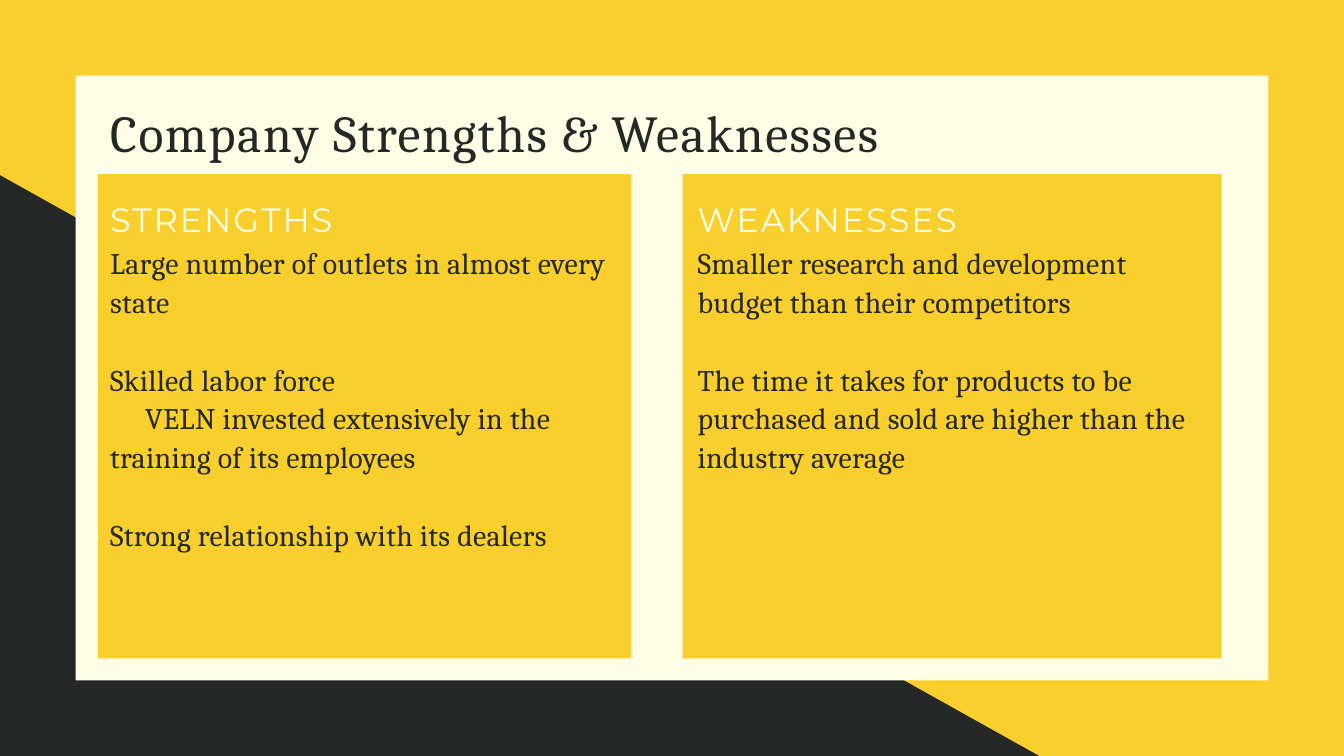
import pptx
import pptx.dml.color
import pptx.enum.shapes
import pptx.enum.text
import pptx.util
from dataclasses import dataclass

Pt = pptx.util.Pt


@dataclass(frozen=True)
class TextStyle:
    font: str
    size: float
    color: str
    spacing: float
    leading: float


class Theme:
    YELLOW = "F8CF2C"
    CREAM = "FFFEE6"
    DARK = "252827"
    TITLE = TextStyle("Cambria", 55.5, DARK, 1.7, 61)
    HEADING = TextStyle("Montserrat", 36, CREAM, 2.1, 46.8)
    BODY = TextStyle("Cambria", 32, DARK, 0.3, 41.6)


def rgb(color):
    return pptx.dml.color.RGBColor.from_string(color)


@dataclass
class Para:
    text: str
    gap: bool = False
    indent: float = 0


class Builder:
    def __init__(self, slide, theme):
        self.s = slide
        self.theme = theme

    def background(self, color):
        fill = self.s.background.fill
        fill.solid()
        fill.fore_color.rgb = rgb(color)

    def rect(self, x, y, w, h, color, rotation=0):
        sp = self.s.shapes.add_shape(
            pptx.enum.shapes.MSO_SHAPE.RECTANGLE, Pt(x), Pt(y), Pt(w), Pt(h))
        sp.shadow.inherit = False
        sp.fill.solid()
        sp.fill.fore_color.rgb = rgb(color)
        sp.line.fill.background()
        sp.rotation = rotation

    def text(self, x, y, w, h, paras, style):
        sp = self.s.shapes.add_textbox(Pt(x), Pt(y), Pt(w), Pt(h))
        tf = sp.text_frame
        tf.word_wrap = True
        tf.vertical_anchor = pptx.enum.text.MSO_ANCHOR.TOP
        tf.margin_left = tf.margin_top = tf.margin_right = tf.margin_bottom = 0
        for i, para in enumerate(paras):
            p = tf.add_paragraph() if i else tf.paragraphs[0]
            p.line_spacing = Pt(style.leading)
            if para.gap:
                p.space_before = Pt(style.leading)
            if para.indent:
                pPr = p._p.get_or_add_pPr()
                pPr.set("marL", "0")
                pPr.set("indent", str(Pt(para.indent)))
            r = p.add_run()
            r.text = para.text
            r.font.name = style.font
            r.font.size = Pt(style.size)
            r.font.color.rgb = rgb(style.color)
            r._r.get_or_add_rPr().set("spc", str(round(style.spacing * 100)))

    def panel(self, x, w, text_x, text_w, heading, paras):
        self.rect(x, 186.5, w, 519, self.theme.YELLOW)
        self.text(text_x, 209.5, text_w, 45.5, [Para(heading)], self.theme.HEADING)
        self.text(text_x, 259, text_w, 328, paras, self.theme.BODY)


def main():
    prs = pptx.Presentation()
    prs.slide_width, prs.slide_height = Pt(1440), Pt(810)
    theme = Theme()
    b = Builder(prs.slides.add_slide(prs.slide_layouts[6]), theme)

    # Backdrop: yellow page, slanted dark band, cream card
    b.background(theme.YELLOW)
    b.rect(-563, 459.5, 1892, 793.5, theme.DARK, rotation=29.2)
    b.rect(81, 81, 1278, 648, theme.CREAM)

    # Title
    b.text(118, 114, 927, 62.5, [Para("Company Strengths & Weaknesses")], theme.TITLE)

    # Two panels
    b.panel(105, 571.5, 118, 535, "STRENGTHS", [
        Para("Large number of outlets in almost every state"),
        Para("Skilled labor force", gap=True),
        Para("VELN invested extensively in the training of its employees", indent=37.5),
        Para("Strong relationship with its dealers", gap=True),
    ])
    b.panel(731.5, 577.5, 747.5, 544, "WEAKNESSES", [
        Para("Smaller research and development budget than their competitors"),
        Para("The time it takes for products to be purchased and sold are higher "
             "than the industry average", gap=True),
    ])

    prs.save("out.pptx")


if __name__ == "__main__":
    main()
